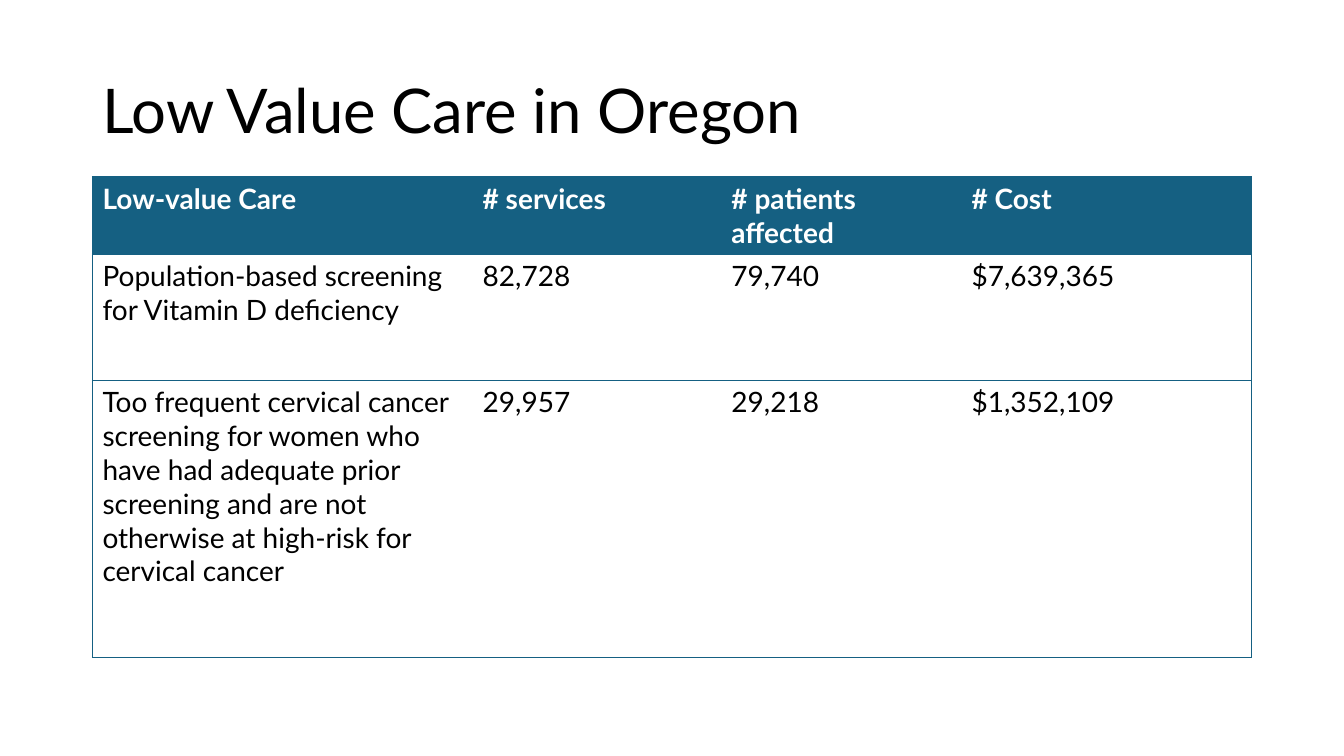
"""Build the slide on low value care in Oregon."""
from dataclasses import dataclass

from lxml.etree import SubElement
from pptx import Presentation
from pptx.dml.color import RGBColor
from pptx.enum.text import MSO_ANCHOR
from pptx.oxml.ns import qn
from pptx.util import Cm, Pt

FONT = "Lato"
BLACK, WHITE, TEAL = "000000", "FFFFFF", "156082"
LEFT, WIDTH = 2.33, 29.21


@dataclass(frozen=True)
class Column:
    heading: str
    width: float


@dataclass(frozen=True)
class CareRow:
    height: float
    texts: tuple[str, ...]
    color: str = BLACK
    fill: str | None = None
    bold: bool = False


COLUMNS = (
    Column("Low-value Care", 9.58),
    Column("# services", 6.27),
    Column("# patients affected", 6.05),
    Column("# Cost", 7.31),
)
ROWS = (
    CareRow(1.95, tuple(c.heading for c in COLUMNS), WHITE, TEAL, True),
    CareRow(3.18, ("Population-based screening for Vitamin D deficiency",
                   "82,728", "79,740", "$7,639,365")),
    CareRow(6.98, ("Too frequent cervical cancer screening for women who have had "
                   "adequate prior screening and are not otherwise at high-risk "
                   "for cervical cancer",
                   "29,957", "29,218", "$1,352,109")),
)


def rgb(color: str) -> RGBColor:
    return RGBColor.from_string(color)


def set_font(p, size: float, color: str, bold: bool = False) -> None:
    p.font.name = FONT
    p.font.size = Pt(size)
    p.font.bold = bold
    p.font.color.rgb = rgb(color)


def set_borders(cell, sides: str) -> None:
    tc_pr = cell._tc.get_or_add_tcPr()
    for side in "LRTB":
        ln = SubElement(tc_pr, qn(f"a:ln{side}"), w=str(Pt(1)))
        if side in sides:
            fill = SubElement(ln, qn("a:solidFill"))
            SubElement(fill, qn("a:srgbClr"), val=TEAL)
        else:
            SubElement(ln, qn("a:noFill"))


def add_title(s, text: str) -> None:
    sp = s.shapes.add_textbox(Cm(LEFT), Cm(1.01), Cm(WIDTH), Cm(3.68))
    tf = sp.text_frame
    tf.word_wrap = True
    tf.vertical_anchor = MSO_ANCHOR.MIDDLE
    p = tf.paragraphs[0]
    p.text = text
    p.line_spacing = 0.9
    set_font(p, 44, BLACK)


def fill_cell(cell, text: str, row: CareRow, sides: str) -> None:
    set_borders(cell, sides)
    if row.fill:
        cell.fill.solid()
        cell.fill.fore_color.rgb = rgb(row.fill)
    else:
        cell.fill.background()
    p = cell.text_frame.paragraphs[0]
    p.text = text
    set_font(p, 20, row.color, row.bold)


def add_care_table(s) -> None:
    height = sum(row.height for row in ROWS)
    table = s.shapes.add_table(len(ROWS), len(COLUMNS), Cm(LEFT), Cm(4.45),
                               Cm(WIDTH), Cm(height)).table
    table.horz_banding = False
    for i, column in enumerate(COLUMNS):
        table.columns[i].width = Cm(column.width)
    edges = {0: "LTB", len(COLUMNS) - 1: "RTB"}
    for r, row in enumerate(ROWS):
        table.rows[r].height = Cm(row.height)
        for c, text in enumerate(row.texts):
            fill_cell(table.cell(r, c), text, row, edges.get(c, "TB"))


def main() -> None:
    prs = Presentation()
    prs.slide_width, prs.slide_height = Cm(33.87), Cm(19.05)
    s = prs.slides.add_slide(prs.slide_layouts[6])
    add_title(s, "Low Value Care in Oregon")
    add_care_table(s)
    prs.save("out.pptx")


if __name__ == "__main__":
    main()
